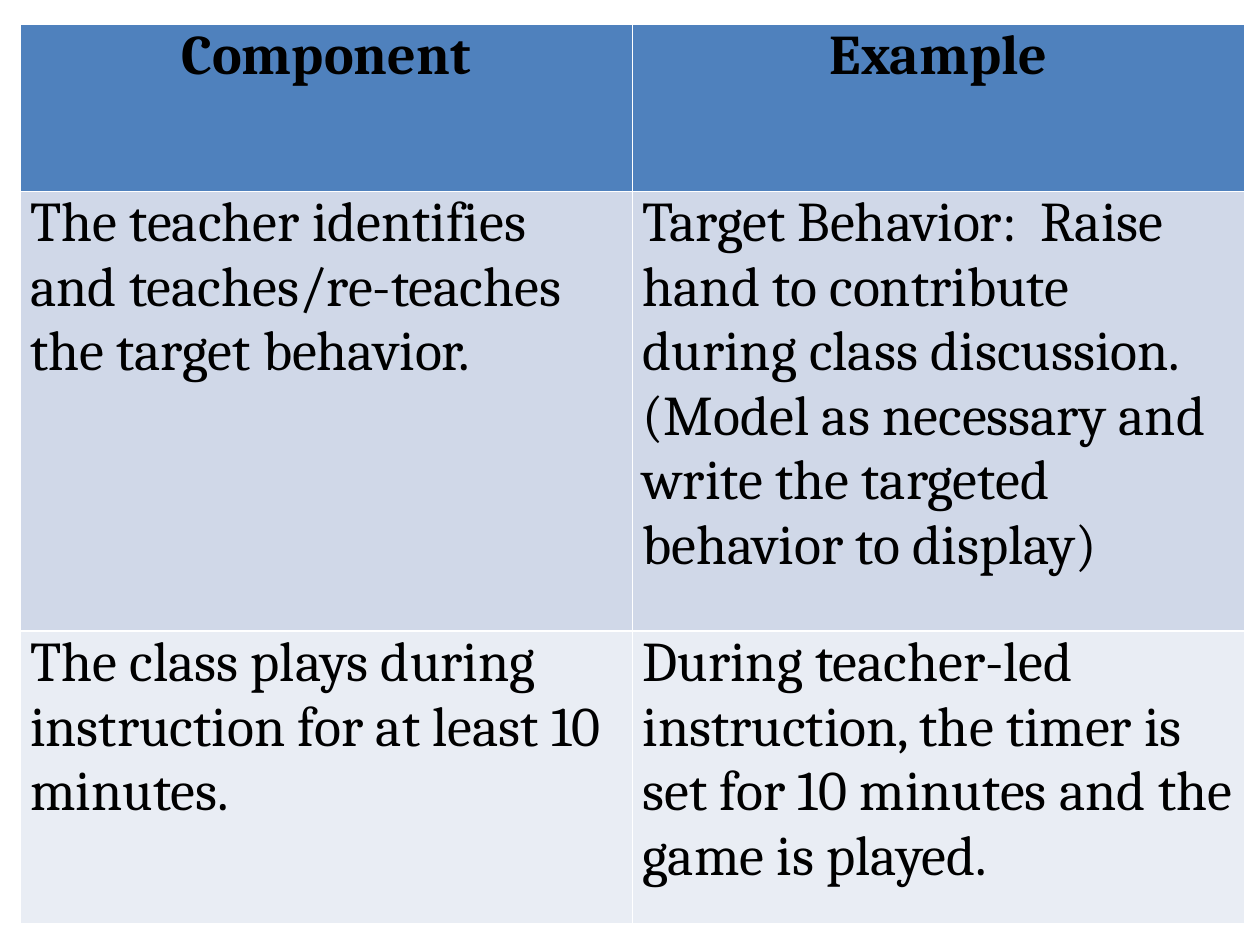
from dataclasses import dataclass

import lxml.etree
import pptx
import pptx.dml.color
import pptx.enum.text
import pptx.oxml.ns
import pptx.util

RGBColor = pptx.dml.color.RGBColor
BLACK = RGBColor(0x00, 0x00, 0x00)
WHITE = RGBColor(0xFF, 0xFF, 0xFF)
HEADER_BLUE = RGBColor(0x4F, 0x81, 0xBD)
BAND_DARK = RGBColor(0xD0, 0xD8, 0xE8)
BAND_LIGHT = RGBColor(0xE9, 0xED, 0xF4)

SLIDE_WIDTH = pptx.util.Inches(10)
SLIDE_HEIGHT = pptx.util.Inches(7.5)
TABLE_LEFT = pptx.util.Inches(0.16)
TABLE_TOP = pptx.util.Inches(0.19)
COLUMN_WIDTH = pptx.util.Inches(4.86)
CELL_MARGIN = pptx.util.Inches(0.08)
BORDER_WIDTH = pptx.util.Pt(1)
FONT_NAME = "Cambria"
FONT_SIZE = pptx.util.Pt(32)


@dataclass(frozen=True)
class TableRow:
    component: str
    example: str
    height: float
    fill: RGBColor
    is_header: bool = False


ROWS = [
    TableRow("Component", "Example", 1.33, HEADER_BLUE, is_header=True),
    TableRow(
        "The teacher identifies and teaches/re-teaches the target behavior.",
        "Target Behavior:  Raise hand to contribute during class discussion. "
        "(Model as necessary and write the targeted behavior to display)",
        3.49,
        BAND_DARK,
    ),
    TableRow(
        "The class plays during instruction for at least 10 minutes.",
        "During teacher-led instruction, the timer is set for 10 minutes "
        "and the game is played.",
        2.32,
        BAND_LIGHT,
    ),
]


def add_borders(cell) -> None:
    properties = cell._tc.get_or_add_tcPr()
    qualified = pptx.oxml.ns.qn
    for tag in ("a:lnL", "a:lnR", "a:lnT", "a:lnB"):
        line = lxml.etree.SubElement(
            properties, qualified(tag), w=str(BORDER_WIDTH)
        )
        fill = lxml.etree.SubElement(line, qualified("a:solidFill"))
        lxml.etree.SubElement(fill, qualified("a:srgbClr"), val=str(WHITE))


def format_cell(cell, text: str, row: TableRow) -> None:
    add_borders(cell)
    cell.fill.solid()
    cell.fill.fore_color.rgb = row.fill
    cell.margin_left = cell.margin_right = CELL_MARGIN
    cell.margin_top = cell.margin_bottom = 0
    cell.text_frame.text = text
    para = cell.text_frame.paragraphs[0]
    if row.is_header:
        para.alignment = pptx.enum.text.PP_ALIGN.CENTER
    font = para.runs[0].font
    font.name = FONT_NAME
    font.size = FONT_SIZE
    font.bold = row.is_header
    font.color.rgb = BLACK


def add_component_table(page, rows: list[TableRow]) -> None:
    height = pptx.util.Inches(sum(row.height for row in rows))
    frame = page.shapes.add_table(
        len(rows), 2, TABLE_LEFT, TABLE_TOP, 2 * COLUMN_WIDTH, height
    )
    table = frame.table
    for column in table.columns:
        column.width = COLUMN_WIDTH
    for table_row, row in zip(table.rows, rows):
        table_row.height = pptx.util.Inches(row.height)
        for cell, text in zip(table_row.cells, (row.component, row.example)):
            format_cell(cell, text, row)


def main() -> None:
    deck = pptx.Presentation()
    deck.slide_width = SLIDE_WIDTH
    deck.slide_height = SLIDE_HEIGHT
    page = deck.slides.add_slide(deck.slide_layouts.get_by_name("Blank"))
    add_component_table(page, ROWS)
    deck.save("out.pptx")


if __name__ == "__main__":
    main()
